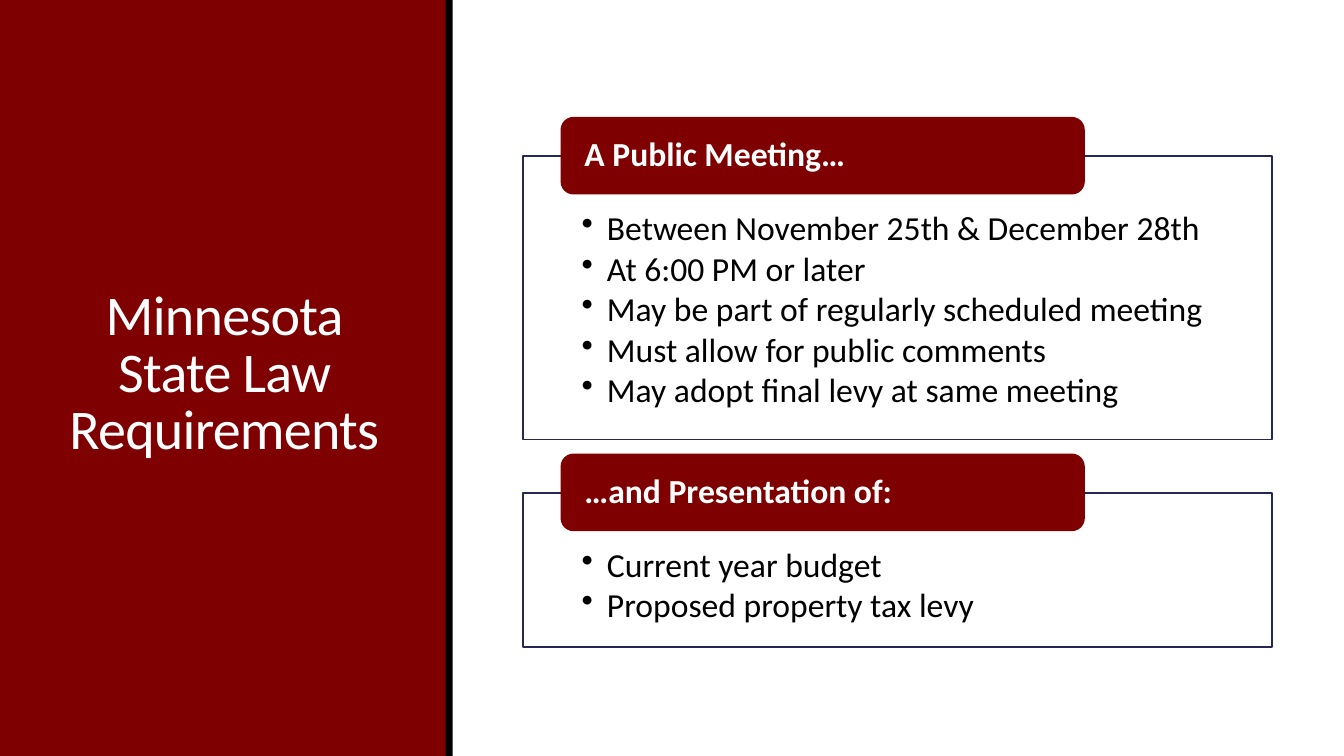
from lxml.etree import SubElement
from pptx import Presentation
from pptx.dml.color import RGBColor
from pptx.enum.shapes import MSO_SHAPE as Shape
from pptx.enum.text import MSO_ANCHOR as Anchor, PP_ALIGN as Align
from pptx.oxml.ns import qn
from pptx.util import Inches, Pt

COLORS = {
    "maroon": "7E0000",
    "black": "000000",
    "white": "FFFFFF",
    "navy": "242852",
}
FONT = "Calibri"
SECTIONS = [
    (1.55, 2.81, "A Public Meeting…", [
        "Between November 25th & December 28th",
        "At 6:00 PM or later",
        "May be part of regularly scheduled meeting",
        "Must allow for public comments",
        "May adopt final levy at same meeting",
    ]),
    (4.89, 1.53, "…and Presentation of:", [
        "Current year budget",
        "Proposed property tax levy",
    ]),
]


def color(name):
    return RGBColor.from_string(COLORS[name])


def add_block(slide, kind, box, fill=None, line=None):
    block = slide.shapes.add_shape(kind, *map(Inches, box))
    block.shadow.inherit = False
    if fill:
        block.fill.solid()
        block.fill.fore_color.rgb = color(fill)
    else:
        block.fill.background()
    if line:
        block.line.color.rgb = color(line)
        block.line.width = Pt(1.25)
    else:
        block.line.fill.background()
    return block


def set_frame(frame, insets, anchor):
    frame.word_wrap = True
    frame.vertical_anchor = anchor
    (frame.margin_left, frame.margin_top,
     frame.margin_right, frame.margin_bottom) = map(Inches, insets)


def style(paragraph, size, tint, align=Align.LEFT, spacing=0.9, bold=False):
    paragraph.alignment = align
    paragraph.line_spacing = spacing
    font = paragraph.font
    font.name, font.size, font.bold = FONT, Pt(size), bold
    font.color.rgb = color(tint)


def add_bullet(paragraph):
    properties = paragraph._p.get_or_add_pPr()
    properties.set("marL", str(Inches(0.25)))
    properties.set("indent", str(-Inches(0.25)))
    bullet = SubElement(properties, qn("a:buChar"), char="•")
    properties.find(qn("a:defRPr")).addprevious(bullet)


def add_title(slide, text):
    title = slide.shapes.add_textbox(*map(Inches, (0.54, 0.57, 3.37, 6.31)))
    set_frame(title.text_frame, (0.1, 0.05, 0.1, 0.05), Anchor.MIDDLE)
    paragraph = title.text_frame.paragraphs[0]
    run = paragraph.add_run()
    run.text = text
    run._r.get_or_add_rPr().set("spc", "-50")
    style(paragraph, 40, "white", Align.CENTER, 0.85)


def add_section(slide, top, height, heading, items):
    body = add_block(slide, Shape.RECTANGLE, (5.19, top, 7.43, height), line="navy")
    set_frame(body.text_frame, (0.58, 0.55, 0.58, 0.19), Anchor.TOP)
    body.text_frame.text = "\n".join(items)
    for paragraph in body.text_frame.paragraphs:
        style(paragraph, 24, "black")
        paragraph.space_after = Pt(3)
        add_bullet(paragraph)

    tab = add_block(slide, Shape.ROUNDED_RECTANGLE, (5.56, top - 0.39, 5.2, 0.77), "maroon")
    set_frame(tab.text_frame, (0.2, 0, 0.2, 0), Anchor.MIDDLE)
    tab.text_frame.text = heading
    style(tab.text_frame.paragraphs[0], 24, "white", bold=True)


def main():
    deck = Presentation()
    deck.slide_width, deck.slide_height = Inches(13.33), Inches(7.5)
    slide = deck.slides.add_slide(deck.slide_layouts[6])
    add_block(slide, Shape.RECTANGLE, (0, 0, 4.43, 7.5), "maroon")
    add_title(slide, "Minnesota State Law Requirements")
    add_block(slide, Shape.RECTANGLE, (4.42, 0, 0.07, 7.5), "black")
    for section in SECTIONS:
        add_section(slide, *section)
    deck.save("out.pptx")


if __name__ == "__main__":
    main()
